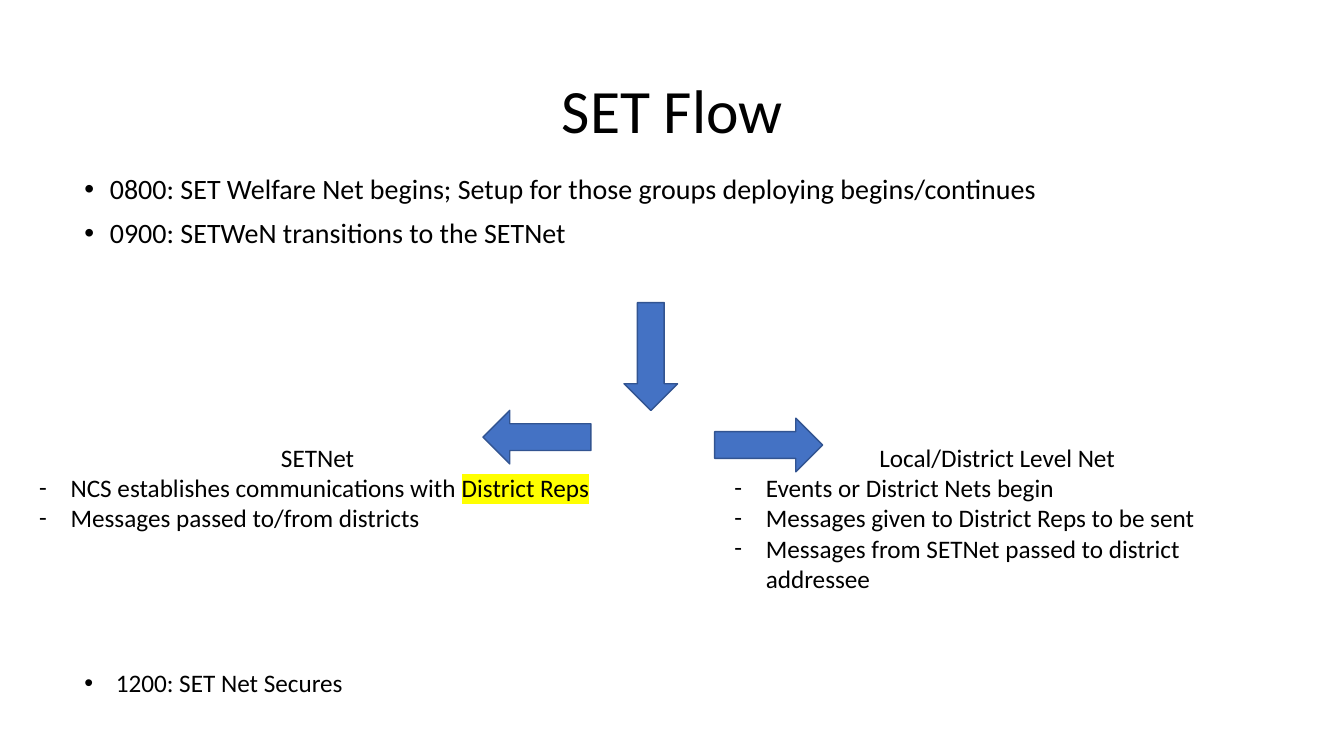
from lxml import etree
from pptx import Presentation
from pptx.dml.color import RGBColor
from pptx.enum.shapes import MSO_SHAPE
from pptx.enum.text import MSO_ANCHOR, MSO_AUTO_SIZE, PP_ALIGN
from pptx.oxml.ns import qn
from pptx.util import Cm, Pt

ARROW = MSO_SHAPE.RIGHT_ARROW
MIDDLE, TOP = MSO_ANCHOR.MIDDLE, MSO_ANCHOR.TOP
GROW, FIXED = MSO_AUTO_SIZE.SHAPE_TO_FIT_TEXT, MSO_AUTO_SIZE.NONE
CENTER = PP_ALIGN.CENTER

FACE = "Calibri"
BLACK, BLUE, NAVY, YELLOW = "000000", "4472C4", "325491", "FFFF00"
MARKS = {"•": "Arial", "-": FACE}

HEAD = {"alignment": CENTER}
TITLE = {"alignment": CENTER, "line_spacing": 0.9}
STEP = {"line_spacing": 0.9, "space_before": Pt(10)}

BOXES = [
    {"at": (2.34, 1.02, 29.21, 3.68), "size": 44, "hang": 0,
     "frame": {"vertical_anchor": MIDDLE, "word_wrap": True, "auto_size": FIXED},
     "lines": [("", TITLE, ["SET Flow"])]},
    {"at": (1.88, 4.29, 29.21, 2.16), "size": 20, "hang": 0.64,
     "frame": {"vertical_anchor": TOP, "word_wrap": True, "auto_size": FIXED},
     "lines": [
         ("•", STEP, ["0800: SET Welfare Net begins; Setup for those groups deploying begins/continues"]),
         ("•", STEP, ["0900: SETWeN transitions to the SETNet"])]},
    {"at": (0.74, 11.02, 14.53, 2.57), "size": 18, "hang": 0.79,
     "frame": {"vertical_anchor": TOP, "word_wrap": False, "auto_size": GROW},
     "lines": [
         ("", HEAD, ["SETNet"]),
         ("-", {}, ["NCS establishes communications with ", ("District Reps", YELLOW)]),
         ("-", {}, ["Messages passed to/from districts"])]},
    {"at": (18.26, 11.02, 13.74, 4.11), "size": 18, "hang": 0.79,
     "frame": {"vertical_anchor": TOP, "word_wrap": True, "auto_size": GROW},
     "lines": [
         ("", HEAD, ["Local/District Level Net"]),
         ("-", {}, ["Events or District Nets begin"]),
         ("-", {}, ["Messages given to District Reps to be sent"]),
         ("-", {}, ["Messages from SETNet passed to district addressee"])]},
    {"at": (1.88, 16.69, 7.11, 1.02), "size": 18, "hang": 0.79,
     "frame": {"vertical_anchor": TOP, "word_wrap": False, "auto_size": GROW},
     "lines": [("•", {}, ["1200: SET Net Secures"])]},
]

ARROWS = [(18.01, 10.54, 0), (12.17, 10.34, 180), (15.04, 8.31, 90)]
LONG, WIDE = 2.72, 1.35


def color(code):
    return RGBColor.from_string(code)


def apply(item, values):
    for name, value in values.items():
        setattr(item, name, value)


def bullet(para, mark, hang):
    props = para._p.get_or_add_pPr()
    props.set("marL", str(Cm(hang)))
    props.set("indent", str(-Cm(hang)))
    etree.SubElement(props, qn("a:buFont"), typeface=MARKS[mark])
    etree.SubElement(props, qn("a:buChar"), char=mark)


def shade(run, code):
    light = etree.Element(qn("a:highlight"))
    etree.SubElement(light, qn("a:srgbClr"), val=code)
    run._r.rPr.find(qn("a:solidFill")).addnext(light)


def write(para, part, size):
    text, back = (part, None) if isinstance(part, str) else part
    run = para.add_run()
    run.text = text
    apply(run.font, {"name": FACE, "size": Pt(size)})
    run.font.color.rgb = color(BLACK)
    if back:
        shade(run, back)


def add_box(slide, box):
    frame = slide.shapes.add_textbox(*map(Cm, box["at"])).text_frame
    apply(frame, box["frame"])
    for i, (mark, style, parts) in enumerate(box["lines"]):
        para = frame.add_paragraph() if i else frame.paragraphs[0]
        apply(para, style)
        if mark:
            bullet(para, mark, box["hang"])
        for part in parts:
            write(para, part, box["size"])


def add_arrow(slide, left, top, turn):
    arrow = slide.shapes.add_shape(ARROW, Cm(left), Cm(top), Cm(LONG), Cm(WIDE))
    arrow.rotation = turn
    arrow.shadow.inherit = False
    arrow.fill.solid()
    arrow.fill.fore_color.rgb = color(BLUE)
    arrow.line.color.rgb = color(NAVY)
    arrow.line.width = Pt(1)


def main():
    deck = Presentation()
    apply(deck, {"slide_width": Cm(33.87), "slide_height": Cm(19.05)})
    slide = deck.slides.add_slide(deck.slide_layouts[6])
    for box in BOXES:
        add_box(slide, box)
    for spot in ARROWS:
        add_arrow(slide, *spot)
    deck.save("out.pptx")


if __name__ == "__main__":
    main()
